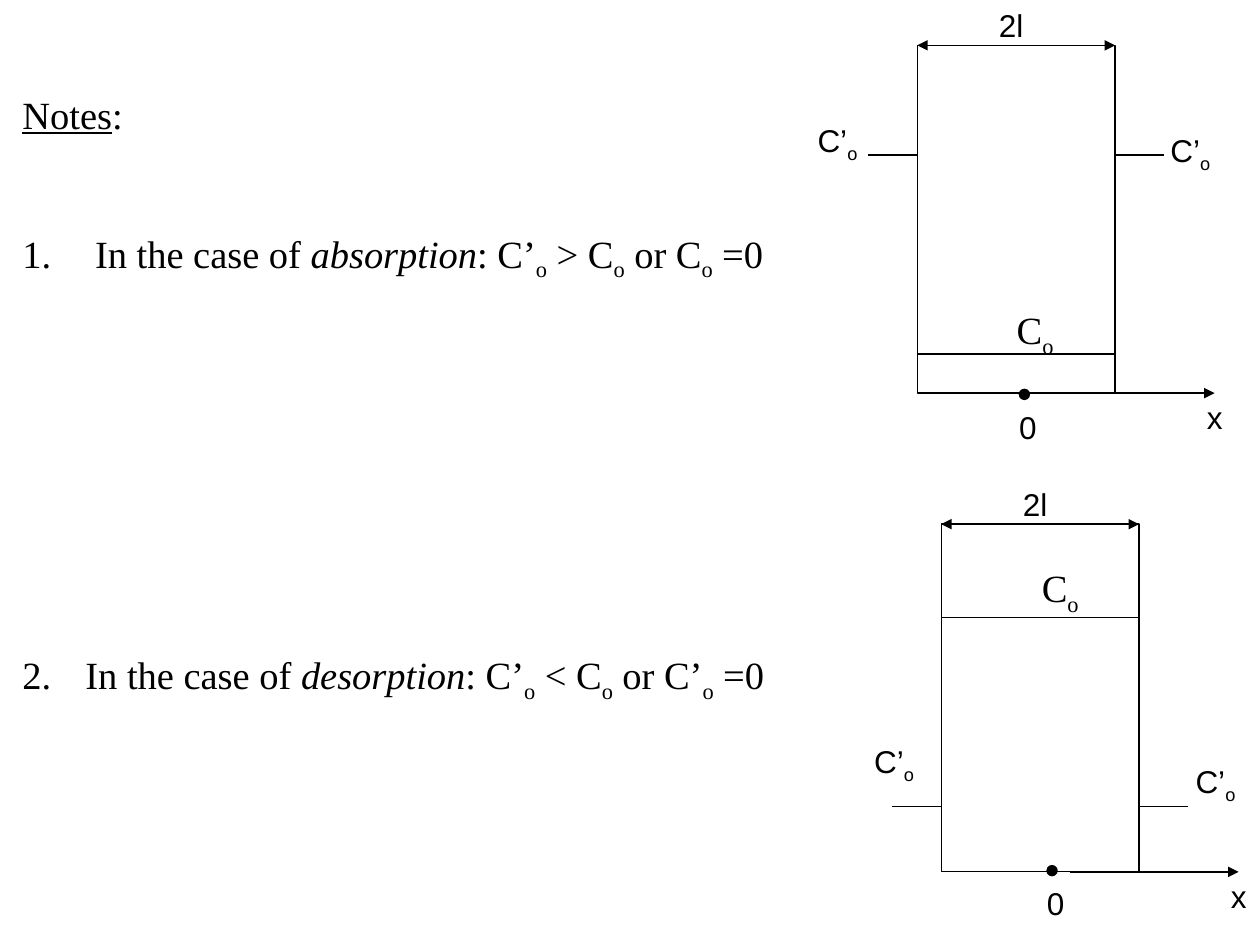
from lxml import etree
from pptx import Presentation
from pptx.dml.color import RGBColor
from pptx.enum.shapes import MSO_CONNECTOR, MSO_SHAPE
from pptx.enum.text import MSO_AUTO_SIZE, PP_ALIGN
from pptx.oxml.ns import qn
from pptx.util import Inches, Pt

COLORS = {"ink": "000000", "paper": "FFFFFF"}
LINE = MSO_CONNECTOR.STRAIGHT
RECTANGLE = MSO_SHAPE.RECTANGLE
OVAL = MSO_SHAPE.OVAL
JUSTIFY = PP_ALIGN.JUSTIFY
GROW = MSO_AUTO_SIZE.SHAPE_TO_FIT_TEXT

SANS = {"name": "Arial", "size": Pt(18)}
SERIF = {"name": "Times New Roman", "size": Pt(22)}
SUB = ("o", {"subscript": True})
OUTSIDE = [("C’", {}), SUB]
INSIDE = [("C", {}), SUB]

SLAB_WIDTH, SLAB_HEIGHT = 1.57, 2.76
TICK = 0.39
DOT = 0.08

# Positions inside a diagram are measured from the top left of its slab.
DIAGRAMS = [
    {"left": 7.28, "top": 0.36, "outside": 0.87, "inside": 2.45,
     "left_label": (-0.89, 0.55), "right_label": (1.91, 0.63),
     "inside_label": (0.69, 2.02), "dot": (0.81, 2.73)},
    {"left": 7.47, "top": 4.16, "outside": 2.24, "inside": 0.74,
     "left_label": (-0.63, 1.68), "right_label": (1.92, 1.84),
     "inside_label": (0.7, 0.27), "dot": (0.84, 2.71)},
]


def color(name):
    return RGBColor.from_string(COLORS[name])


def add_spans(para, spans, base):
    """Add (text, format) spans on top of a base font format."""
    for text, changes in spans:
        span = para.add_run()
        span.text = text
        span.font.color.rgb = color("ink")
        for key, value in {**base, **changes}.items():
            if key == "subscript":
                span._r.get_or_add_rPr().set("baseline", "-25000")
            else:
                setattr(span.font, key, value)


def add_label(group, spans, left, top, width, height=0.4, base=SANS):
    box = group.shapes.add_textbox(*map(Inches, (left, top, width, height)))
    box.text_frame.word_wrap = False
    box.text_frame.auto_size = GROW
    add_spans(box.text_frame.paragraphs[0], spans, base)


def add_line(group, start, end, arrows=()):
    """Draw a line; arrows names the ends (headEnd, tailEnd) that get a tip."""
    line = group.shapes.add_connector(LINE, *map(Inches, (*start, *end)))
    line.line.color.rgb = color("ink")
    line.line.width = Pt(0.75)
    outline = line.line._get_or_add_ln()
    for tip in arrows:
        etree.SubElement(outline, qn(f"a:{tip}"), type="triangle")
    etree.SubElement(line._element.spPr, qn("a:effectLst"))


def add_outlined(group, kind, left, top, width, height, fill):
    shape = group.shapes.add_shape(kind, *map(Inches, (left, top, width, height)))
    shape.shadow.inherit = False
    shape.fill.solid()
    shape.fill.fore_color.rgb = color(fill)
    shape.line.color.rgb = color("ink")
    shape.line.width = Pt(0.75)


def add_diagram(page, plan):
    """Draw a slab of width 2l with its inner and outer concentrations."""
    group = page.shapes.add_group_shape()
    left, top = plan["left"], plan["top"]
    right, bottom = left + SLAB_WIDTH, top + SLAB_HEIGHT

    def place(key):
        return left + plan[key][0], top + plan[key][1]

    add_outlined(group, RECTANGLE, left, top, SLAB_WIDTH, SLAB_HEIGHT, "paper")
    add_line(group, (left + 1.02, bottom), (left + 2.36, bottom), ["tailEnd"])
    add_line(group, (left, top), (right, top), ["headEnd", "tailEnd"])
    add_label(group, [("2l", {})], left + 0.55, top - 0.36, 0.42)
    add_label(group, [("x", {})], left + 2.2, bottom - 0.01, 0.33)

    outside, inside = top + plan["outside"], top + plan["inside"]
    add_line(group, (left - TICK, outside), (left, outside))
    add_line(group, (right, outside), (right + TICK, outside))
    add_line(group, (left, inside), (right, inside))
    for key in ("left_label", "right_label"):
        add_label(group, OUTSIDE, *place(key), 0.53)
    add_label(group, INSIDE, *place("inside_label"), 0.51, 0.47, SERIF)

    dot_left, dot_top = place("dot")
    add_outlined(group, OVAL, dot_left, dot_top, DOT, DOT, "ink")
    add_label(group, [("0", {})], dot_left - 0.1, dot_top + 0.1, 0.34)


def case_spans(lead, process, relation, zero):
    return [(lead, {}), (process, {"italic": True}), (": C’", {}), SUB,
            (f" {relation} C", {}), SUB, (f" or {zero}", {}), SUB, (" =0", {})]


def add_notes(page):
    box = page.shapes.add_textbox(*map(Inches, (0.08, 0.67, 6.89, 6.4)))
    frame = box.text_frame
    frame.word_wrap = True
    paragraphs = [
        ([("Notes", {"underline": True}), (":", {})], 0, False),
        (case_spans(" In the case of ", "absorption", ">", "C"), 53, True),
        (case_spans("In the case of ", "desorption", "<", "C’"), 211, True),
    ]
    for index, (spans, space, numbered) in enumerate(paragraphs):
        para = frame.add_paragraph() if index else frame.paragraphs[0]
        para.alignment = JUSTIFY
        para.space_before = Pt(space)
        properties = para._p.get_or_add_pPr()
        properties.set("marL", str(Inches(0.5)))
        properties.set("indent", str(Inches(-0.5)))
        if numbered:
            etree.SubElement(properties, qn("a:buFont"), typeface=SERIF["name"])
            etree.SubElement(properties, qn("a:buAutoNum"), type="arabicPeriod")
        add_spans(para, spans, SERIF)


def main():
    deck = Presentation()
    deck.slide_width, deck.slide_height = Inches(10), Inches(7.5)
    page = deck.slides.add_slide(deck.slide_layouts[6])
    add_notes(page)
    for plan in DIAGRAMS:
        add_diagram(page, plan)
    deck.save("out.pptx")


if __name__ == "__main__":
    main()
